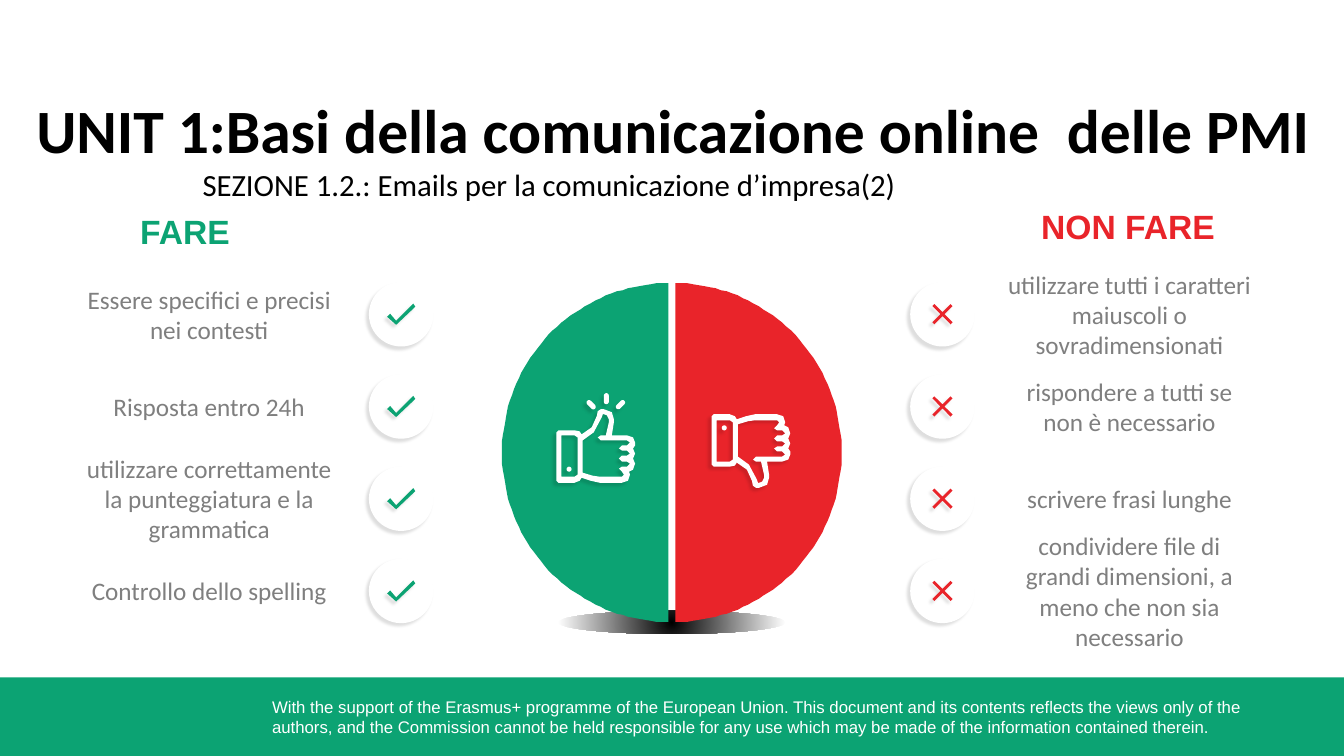
import math
from dataclasses import dataclass

from lxml import etree
from pptx import Presentation
from pptx import util as u
from pptx.dml.color import RGBColor
from pptx.enum import shapes, text
from pptx.oxml import parse_xml
from pptx.oxml.ns import nsdecls, qn

CELL = u.Inches(0.1)  # one column or row of the layout grid
COLUMNS, ROWS = 133.33, 75


@dataclass(frozen=True)
class Theme:
    green: str = "0CA373"
    red: str = "E9242A"
    white: str = "FFFFFF"
    black: str = "000000"
    grey: str = "7F7F7F"
    heading_font: str = "Arial"
    body_font: str = "Calibri"
    title: int = 44
    heading: int = 24
    subtitle: int = 22
    body: int = 18
    footer: int = 12


@dataclass(frozen=True)
class Box:
    """A region in grid cells."""
    left: float
    top: float
    width: float
    height: float

    def inner(self, left, top, width, height):
        return Box(self.left + left, self.top + top, width, height)

    def emu(self):
        return [round(n * CELL) for n in (self.left, self.top, self.width, self.height)]


THEME = Theme()
MIDDLE = {"align": text.PP_ALIGN.CENTER, "anchor": text.MSO_ANCHOR.MIDDLE}

# Outlines in tenths of a cell
TICK = [[(9, 17), (3, 10), (0, 13), (9, 21), (28, 3), (26, 0)]]
CROSS = [[(20, 2), (18, 0), (10, 8), (2, 0), (0, 2), (8, 10),
          (0, 18), (2, 20), (10, 12), (18, 20), (20, 18), (12, 10)]]
HAND_HEIGHT = 73
HAND = [
    [(76, 39), (78, 36), (78, 33), (76, 28), (70, 26), (55, 26), (57, 13), (57, 10),
     (55, 3), (47, 0), (44, 0), (41, 2), (40, 7), (35, 18), (25, 25), (23, 22), (18, 21),
     (2, 21), (0, 23), (0, 71), (2, 73), (18, 73), (23, 71), (25, 68), (34, 71), (43, 73),
     (65, 73), (71, 71), (73, 65), (72, 62), (76, 60), (78, 54), (76, 49), (78, 44)],
    [(21, 65), (18, 67), (5, 67), (5, 26), (18, 26), (21, 28)],
    [(65, 41), (70, 41), (73, 44), (70, 46), (65, 46), (62, 49), (65, 52), (70, 52),
     (73, 54), (70, 57), (65, 57), (62, 59), (65, 62), (67, 65), (65, 67), (43, 67),
     (36, 66), (26, 63), (26, 31), (37, 23), (45, 8), (46, 5), (47, 5), (50, 6), (52, 10),
     (52, 13), (49, 26), (44, 26), (41, 28), (44, 31), (70, 31), (73, 33), (70, 36),
     (65, 36), (62, 39)],
]

# Each point comes with the number of lines its box holds
DOS = [("Essere specifici e precisi nei contesti", 2),
       ("Risposta entro 24h", 1),
       ("utilizzare correttamente la punteggiatura e la grammatica", 4),
       ("Controllo dello spelling", 1)]
DONTS = [("utilizzare tutti i caratteri maiuscoli o sovradimensionati", 3),
         ("rispondere a tutti se non è necessario", 2),
         ("scrivere frasi lunghe", 1),
         ("condividere file di grandi dimensioni, a meno che non sia necessario", 4)]


def paint(shape, color, shadow=False):
    shape.fill.solid()
    shape.fill.fore_color.rgb = RGBColor.from_string(color)
    shape.line.fill.background()
    shape.shadow.inherit = False
    if shadow:
        effects = shape._element.spPr.find(qn("a:effectLst"))
        outer = etree.SubElement(effects, qn("a:outerShdw"), blurRad=str(u.Pt(2)),
                                 dist=str(u.Pt(3)), dir=str(135 * 60000), rotWithShape="0")
        tint = etree.SubElement(outer, qn("a:srgbClr"), val=THEME.black)
        etree.SubElement(tint, qn("a:alpha"), val="12000")
    return shape


def add_preset(slide, kind, box, color, shadow=False):
    return paint(slide.shapes.add_shape(kind, *box.emu()), color, shadow)


def add_outline(slide, box, contours, color, shadow=False):
    """Draws closed contours, in tenths of a cell from the box's corner."""
    first, *others = contours
    builder = slide.shapes.build_freeform(*first[0], scale=CELL / 10)
    builder.add_line_segments(first[1:])
    for contour in others:
        builder.move_to(*contour[0])
        builder.add_line_segments(contour[1:])
    left, top, _, _ = box.emu()
    return paint(builder.convert_to_shape(left, top), color, shadow)


def add_text(slide, box, words, size, color, font, bold=False, align=text.PP_ALIGN.LEFT,
             anchor=text.MSO_ANCHOR.TOP, inset=True):
    frame = slide.shapes.add_textbox(*box.emu()).text_frame
    frame.word_wrap = True
    frame.vertical_anchor = anchor
    if not inset:
        frame.margin_left = frame.margin_right = frame.margin_top = frame.margin_bottom = 0
    paragraph = frame.paragraphs[0]
    paragraph.text = words
    paragraph.alignment = align
    paragraph.font.name = font
    paragraph.font.size = u.Pt(size)
    paragraph.font.bold = bold
    paragraph.font.color.rgb = RGBColor.from_string(color)


def add_footer(slide, box):
    add_preset(slide, shapes.MSO_SHAPE.RECTANGLE, box, THEME.green)
    add_text(slide, box.inner(26, 1.4, 104.2, 5),
             "With the support of the Erasmus+ programme of the European Union. This document "
             "and its contents reflects the views only of the authors, and the Commission cannot "
             "be held responsible for any use which may be made of the information contained "
             "therein.", THEME.footer, THEME.white, THEME.heading_font)


def add_titles(slide, box):
    add_text(slide, box.inner(16.6, 7.4, 84.2, 4),
             "SEZIONE 1.2.: Emails per la comunicazione d’impresa(2)",
             THEME.subtitle, THEME.black, THEME.body_font, inset=False)
    add_text(slide, box.inner(0.1, 0.1, box.width, 7.5),
             "UNIT 1:Basi della comunicazione online  delle PMI",
             THEME.title, THEME.black, THEME.body_font, bold=True, inset=False)


def add_floor_shadow(slide, box):
    shape = add_preset(slide, shapes.MSO_SHAPE.OVAL, box, THEME.black)
    properties = shape._element.spPr
    gradient = parse_xml(
        f'<a:gradFill {nsdecls("a")} rotWithShape="1"><a:gsLst>'
        f'<a:gs pos="0"><a:srgbClr val="{THEME.black}"/></a:gs>'
        f'<a:gs pos="100000"><a:srgbClr val="{THEME.white}"/></a:gs></a:gsLst>'
        '<a:path path="circle"><a:fillToRect l="50000" t="50000" r="50000" b="50000"/></a:path>'
        '</a:gradFill>')
    properties.replace(properties.find(qn("a:solidFill")), gradient)


def add_half_disc(slide, box, color, side):
    """Fills the box with half an ellipse bulging left (side -1) or right (side 1)."""
    flat = 0 if side > 0 else box.width * 10
    middle = box.height * 5
    angles = [math.radians(degree) for degree in range(-90, 91, 2)]
    arc = [(flat + side * box.width * 10 * math.cos(angle), middle + middle * math.sin(angle))
           for angle in angles]
    add_outline(slide, box, [arc], color)


def add_hand(slide, box, thumb_up):
    contours = HAND if thumb_up else [[(x, HAND_HEIGHT - y) for x, y in contour]
                                      for contour in HAND]
    add_outline(slide, box, contours, THEME.white, shadow=True)
    button = box.inner(1, 5.7 if thumb_up else 1.1, 0.5, 0.5)
    add_preset(slide, shapes.MSO_SHAPE.OVAL, button, THEME.white, shadow=True)


def add_rays(slide, box):
    for left, top, angle in ((0.2, 0.6, -45), (1.7, 0, 0), (3.1, 0.6, 45)):
        ray = add_preset(slide, shapes.MSO_SHAPE.ROUNDED_RECTANGLE,
                         box.inner(left, top, 0.5, 1.1), THEME.white, shadow=True)
        ray.adjustments[0] = 0.5
        ray.rotation = angle


def add_disc(slide, box):
    add_floor_shadow(slide, box.inner(5.6, 32.5, 22.5, 2.3))
    add_half_disc(slide, box.inner(0, 0, 16.5, box.height), THEME.green, -1)
    add_half_disc(slide, box.inner(17.2, 0, 16.5, box.height), THEME.red, 1)
    add_hand(slide, box.inner(5.4, 12.5, 7.8, 7.3), thumb_up=True)
    add_rays(slide, box.inner(8.4, 10.9, 3.8, 1.6))
    add_hand(slide, box.inner(20.8, 13, 7.8, 7.3), thumb_up=False)


def add_advice(slide, box, heading, heading_box, points, color, mark, text_left, badge_left):
    """Places a heading over rows that each hold a text and a round badge."""
    add_text(slide, heading_box, heading, THEME.heading, color, THEME.heading_font,
             bold=True, **MIDDLE)
    pitch = box.height / len(points)
    mark_width, mark_height = (max(values) / 10 for values in zip(*mark[0]))
    for row, (words, lines) in enumerate(points):
        center = pitch * (row + 0.5)
        badge = box.inner(badge_left, center - 3.2, 6.4, 6.4)
        add_preset(slide, shapes.MSO_SHAPE.OVAL, badge, THEME.white, shadow=True)
        mark_box = badge.inner((badge.width - mark_width) / 2, (badge.height - mark_height) / 2,
                               mark_width, mark_height)
        add_outline(slide, mark_box, mark, color, shadow=True)
        height = 1 + 3.03 * lines
        add_text(slide, box.inner(text_left, center - height / 2, 26.5, height), words,
                 THEME.body, THEME.grey, THEME.body_font, **MIDDLE)


def main():
    presentation = Presentation()
    presentation.slide_width = round(COLUMNS * CELL)
    presentation.slide_height = ROWS * CELL
    slide = presentation.slides.add_slide(presentation.slide_layouts[6])
    add_footer(slide, Box(0, 67.2, COLUMNS, 7.8))
    add_disc(slide, Box(49.8, 28.1, 33.7, 33.6))
    add_advice(slide, Box(7.5, 26.6, 35.5, 36.6), "FARE", Box(9.5, 20.4, 17.7, 5),
               DOS, THEME.green, TICK, text_left=0, badge_left=29.1)
    add_advice(slide, Box(90.3, 26.6, 35, 36.6), "NON FARE", Box(100.4, 19.9, 23, 5),
               DONTS, THEME.red, CROSS, text_left=8.5, badge_left=0)
    add_titles(slide, Box(3.5, 9, 129.8, 12))
    presentation.save("out.pptx")


if __name__ == "__main__":
    main()
